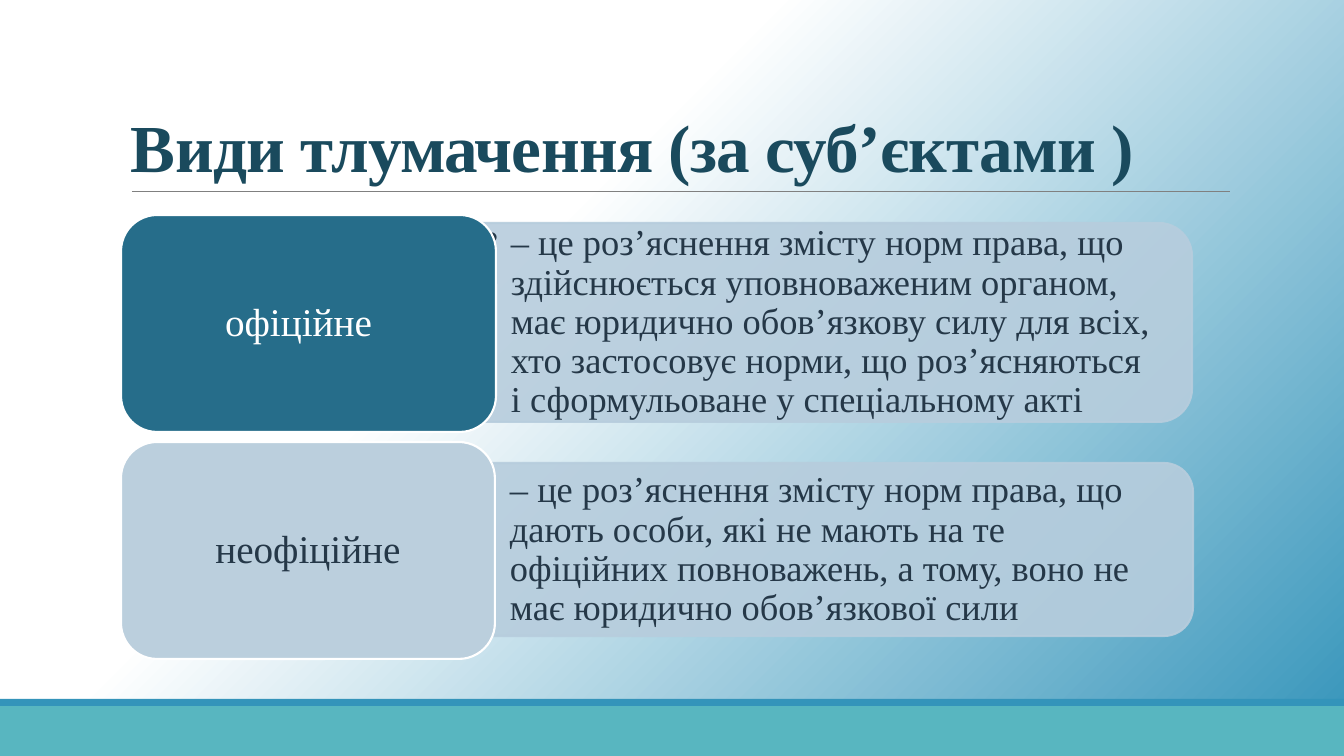
from pptx import Presentation
from pptx.dml.color import RGBColor
from pptx.enum.shapes import MSO_CONNECTOR, MSO_SHAPE
from pptx.enum.text import MSO_ANCHOR, PP_ALIGN
from pptx.oxml.ns import qn
from pptx.util import Pt
from lxml.etree import SubElement

EMU_PER_PX = 914400 / 100.8
FONT = "Times New Roman"
COLORS = {
    "white": "FFFFFF",
    "blue": "3494BA",
    "teal": "58B6C0",
    "rule": "808080",
    "title": "1A4A5D",
    "panel": "B7CDDD",
    "official": "266D8A",
    "unofficial": "BBCFDD",
    "text": "253848",
}

# label, label box, label fill, label colour, right inset, panel box, text box, definition
KINDS = [
    ("офіційне", (121, 215, 375, 217), "official", "white", 42,
     (458, 223, 734, 199), (459, 233, 724, 179),
     "– це роз’яснення змісту норм права, що здійснюється уповноваженим "
     "органом, має юридично обов’язкову силу для всіх, хто застосовує норми, "
     "що роз’ясняються і сформульоване у спеціальному акті"),
    ("неофіційне", (121, 442, 374, 217), "unofficial", "text", 22,
     (458, 463, 735, 173), (458, 472, 727, 156),
     "– це роз’яснення змісту норм права, що дають особи, які не мають на те "
     "офіційних повноважень, а тому, воно не має юридично обов’язкової сили"),
]


def px(length):
    return round(length * EMU_PER_PX)


def color(name):
    return RGBColor.from_string(COLORS[name])


def add_block(page, preset, box, fill, line=None):
    shape = page.shapes.add_shape(preset, *map(px, box))
    shape.shadow.inherit = False
    shape.fill.solid()
    shape.fill.fore_color.rgb = color(fill)
    if line:
        shape.line.color.rgb = color(line)
        shape.line.width = Pt(1.5)
    else:
        shape.line.fill.background()
    return shape


def write(shape, text, size, ink, anchor, insets, spacing, align=PP_ALIGN.LEFT):
    frame = shape.text_frame
    frame.word_wrap = True
    frame.vertical_anchor = anchor
    (frame.margin_left, frame.margin_top,
     frame.margin_right, frame.margin_bottom) = map(px, insets)
    para = frame.paragraphs[0]
    para.text = text
    para.alignment = align
    para.line_spacing = spacing
    para.font.name = FONT
    para.font.size = Pt(size)
    para.font.color.rgb = color(ink)
    return para


def add_background(page):
    fill = page.background.fill
    fill.gradient()
    fill.gradient_angle = 315
    for stop, name, position in zip(fill.gradient_stops, ("white", "blue"), (0.37, 1)):
        stop.color.rgb = color(name)
        stop.position = position


def add_rule(page, left, right, top):
    rule = page.shapes.add_connector(
        MSO_CONNECTOR.STRAIGHT, px(left), px(top), px(right), px(top))
    rule.line.color.rgb = color("rule")
    rule.line.width = Pt(0.5)
    SubElement(rule.element.spPr, qn("a:effectLst"))


def add_title(page, text):
    box = page.shapes.add_textbox(*map(px, (121, 31, 1109, 160)))
    para = write(box, text, 48, "title", MSO_ANCHOR.BOTTOM, (10, 5, 10, 5), 0.85)
    para.font.bold = True
    para.runs[0].font.size = Pt(48)
    para.runs[0].font.element.set("spc", "-50") if hasattr(
        para.runs[0].font, "element") else para.runs[0]._r.get_or_add_rPr().set("spc", "-50")


def add_panel(page, box):
    # The shape is turned a quarter, so its rounded top faces right
    left, top, width, height = box
    shift = (width - height) / 2
    panel = add_block(page, MSO_SHAPE.ROUND_2_SAME_RECTANGLE,
                      (left + shift, top - shift, height, width), "panel", "panel")
    panel.rotation = 90
    for tint in panel.element.spPr.iter(qn("a:srgbClr")):
        SubElement(tint, qn("a:alpha"), val="90000")


def add_definition(page, box, text):
    area = page.shapes.add_textbox(*map(px, box))
    para = write(area, text, 26, "text", MSO_ANCHOR.MIDDLE, (27, 14, 27, 14), 0.9)
    para.level = 1
    properties = para._p.get_or_add_pPr()
    properties.set("marL", str(px(25)))
    properties.set("indent", str(-px(25)))
    SubElement(properties, qn("a:buChar"), char="•")
    # The bullet must precede the default run properties
    defaults = properties.find(qn("a:defRPr"))
    if defaults is not None:
        properties.append(defaults)


def add_label(page, box, text, fill, ink, right_inset):
    label = add_block(page, MSO_SHAPE.ROUNDED_RECTANGLE, box, fill, "white")
    write(label, text, 28, ink, MSO_ANCHOR.MIDDLE,
          (22, 16, right_inset, 16), 0.9, PP_ALIGN.CENTER)


def main():
    deck = Presentation()
    deck.slide_width, deck.slide_height = px(1344), px(756)
    page = deck.slides.add_slide(deck.slide_layouts[6])

    # Backdrop and footer bands
    add_background(page)
    add_block(page, MSO_SHAPE.RECTANGLE, (0, 706, 1344, 50), "teal")
    add_block(page, MSO_SHAPE.RECTANGLE, (0, 699, 1344, 7), "blue")

    # Heading
    add_rule(page, 132, 1230, 191)
    add_title(page, "Види тлумачення (за суб’єктами )")

    # One row for each kind of interpretation
    for label, label_box, fill, ink, inset, panel_box, text_box, definition in KINDS:
        add_panel(page, panel_box)
        add_definition(page, text_box, definition)
        add_label(page, label_box, label, fill, ink, inset)

    deck.save("out.pptx")


if __name__ == "__main__":
    main()
